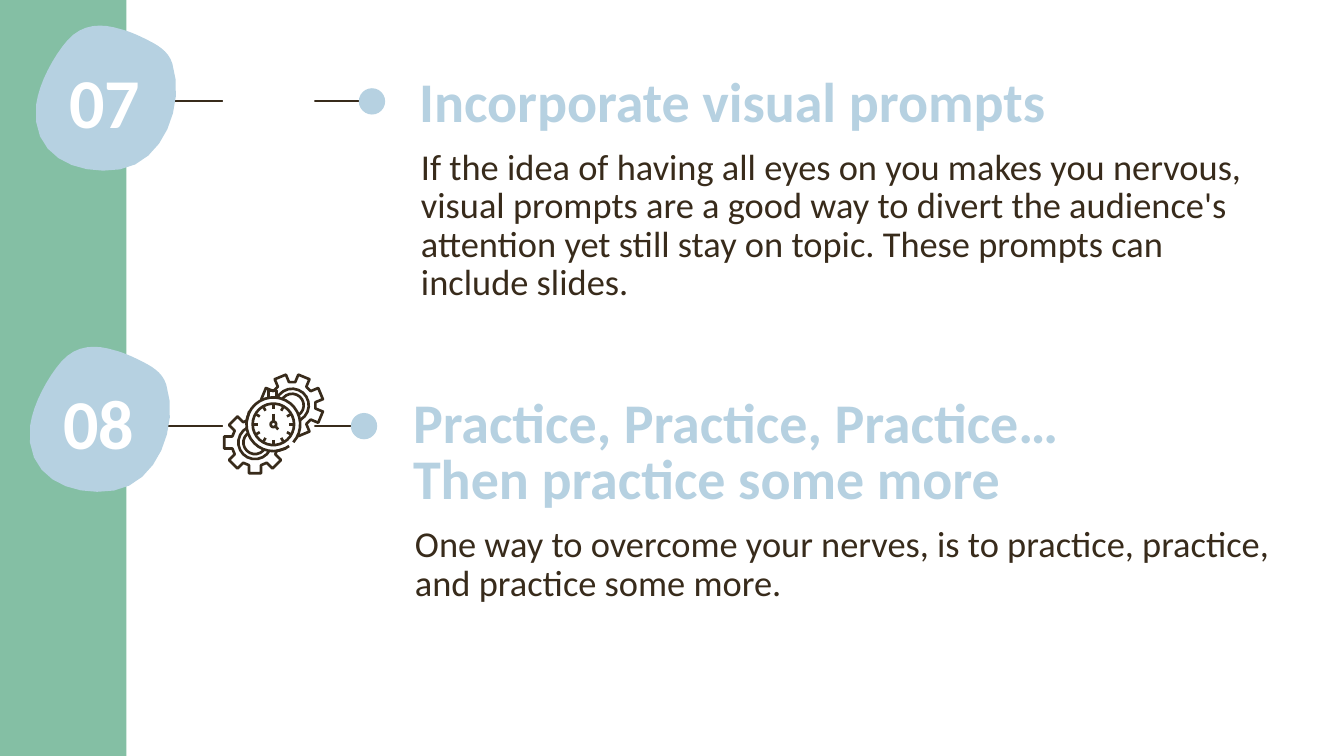
from math import cos, dist, radians, sin

from lxml.etree import SubElement
from pptx import Presentation
from pptx.dml.color import RGBColor
from pptx.enum.shapes import MSO_CONNECTOR, MSO_SHAPE
from pptx.enum.text import MSO_ANCHOR, PP_ALIGN
from pptx.oxml.ns import qn
from pptx.util import Pt

GREEN = RGBColor(0x84, 0xBF, 0xA4)
BLUE = RGBColor(0xB6, 0xD1, 0xE1)
BROWN = RGBColor(0x38, 0x2B, 0x1B)
WHITE = RGBColor(0xFF, 0xFF, 0xFF)

ICON_STROKE = 1.9
CLOCK_CENTRE = (195.3, 303.1)
CLOCK_RING = 19.2

# Badge outline: a start point, then curves of two handles and an end point
BADGE_START = (61.2, 2.9)
BADGE_CURVES = [
    ((47.5, -1.4), (33.8, -1.4), (23, 10.8)),
    ((13, 22.3), (2.9, 41), (0.7, 56.2)),
    ((-4.3, 92.2), (28.1, 108), (60.5, 103)),
    ((91.4, 97.9), (107.3, 56.9), (97.9, 27.4)),
    ((95, 18), (86.4, 13.7), (79.2, 10.1)),
    ((73.4, 7.2), (67, 4.3), BADGE_START),
]

TITLE = {"size": Pt(40), "bold": True}
BODY = {"size": Pt(26), "bold": False}
NUMBER = {"size": Pt(50), "bold": True}


def paint(shape, fill=None, stroke=None):
    shape.shadow.inherit = False
    if fill is None:
        shape.fill.background()
    else:
        shape.fill.solid()
        shape.fill.fore_color.rgb = fill
    if stroke is None:
        shape.line.fill.background()
    else:
        shape.line.color.rgb = stroke
        shape.line.width = Pt(ICON_STROKE)


def add_preset(slide, kind, left, top, width, height, fill):
    shape = slide.shapes.add_shape(kind, Pt(left), Pt(top), Pt(width), Pt(height))
    paint(shape, fill)


def add_outline(slide, contours, close=False, **colours):
    contours = [[(Pt(x), Pt(y)) for x, y in contour] for contour in contours]
    builder = slide.shapes.build_freeform(*contours[0][0], scale=1.0)
    for index, (first, *others) in enumerate(contours):
        if index:
            builder.move_to(*first)
        builder.add_line_segments(others, close=close)
    paint(builder.convert_to_shape(), **colours)


def add_text(slide, left, top, width, height, lines, font, colour,
             spacing, align=PP_ALIGN.LEFT):
    box = slide.shapes.add_textbox(Pt(left), Pt(top), Pt(width), Pt(height))
    frame = box.text_frame
    frame.word_wrap = True
    frame.vertical_anchor = MSO_ANCHOR.TOP
    for index, line in enumerate(lines):
        paragraph = frame.paragraphs[0] if index == 0 else frame.add_paragraph()
        paragraph.text = line
        paragraph.line_spacing = spacing
        paragraph.alignment = align
        for name, value in {"name": "Calibri", **font}.items():
            setattr(paragraph.font, name, value)
        paragraph.font.color.rgb = colour


def polar(centre, radius, degrees):
    angle = radians(degrees)
    return centre[0] + radius * cos(angle), centre[1] + radius * sin(angle)


def arc(centre, radius, start=0, end=360, steps=20):
    return [polar(centre, radius, start + (end - start) * step / steps)
            for step in range(steps + 1)]


def badge_points(left, top, steps=8):
    points, start = [], BADGE_START
    for first, second, end in BADGE_CURVES:
        for step in range(steps):
            t = step / steps
            weights = ((1 - t) ** 3, 3 * t * (1 - t) ** 2, 3 * t * t * (1 - t), t ** 3)
            x, y = (sum(w * p[axis] for w, p in zip(weights, (start, first, second, end)))
                    for axis in (0, 1))
            points.append((left + x, top + y))
        start = end
    return points


def outside_clock(points):
    """Keep the part of a loop, begun under the clock, that shows beside it."""
    def gap(point):
        return dist(point, CLOCK_CENTRE) - CLOCK_RING

    kept = []
    for (x1, y1), (x2, y2) in zip(points, points[1:]):
        if (gap((x1, y1)) > 0) != (gap((x2, y2)) > 0):
            steps = [(x1 + (x2 - x1) * k / 20, y1 + (y2 - y1) * k / 20) for k in range(21)]
            kept.append(min(steps, key=lambda point: abs(gap(point))))
        if gap((x2, y2)) > 0:
            kept.append((x2, y2))
    return kept


def gear_contours(centre, turn):
    root, tip, half_tooth = 16.2, 22, 4.3
    teeth = []
    for tooth in range(8):
        degrees = turn + 45 * tooth
        for reach, side in ((root, -half_tooth), (tip, -half_tooth),
                            (tip, half_tooth), (root, half_tooth)):
            teeth.append(polar(polar(centre, reach, degrees), side, degrees + 90))
    loops = [teeth + teeth[:1]]
    loops += [arc(centre, radius, turn, turn + 360) for radius in (11.9, 8.3)]
    return [outside_clock(loop) for loop in loops]


def add_icon(slide):
    x, y = CLOCK_CENTRE
    # Gears, crown and the outer ring with its gap at lower right
    crown = [(x - 3.6, y - 18.9), (x - 3.6, y - 24.1), (x + 2.2, y - 24.1), (x + 2.2, y - 19)]
    add_outline(slide, [*gear_contours((182.2, 316.1), -45),
                        *gear_contours((208.7, 289.6), 112.5),
                        crown, arc(CLOCK_CENTRE, CLOCK_RING, 54, 402, 30)], stroke=BROWN)
    # Clock face with hour marks
    marks = [[polar(CLOCK_CENTRE, radius, degrees) for radius in (11.2, 14)]
             for degrees in range(0, 360, 30)]
    add_outline(slide, [arc(CLOCK_CENTRE, 14.8, steps=30), *marks], stroke=BROWN)
    # Hub and hands
    add_outline(slide, [arc(CLOCK_CENTRE, 2, steps=12),
                        [(x, y - 7.6), (x, y - 2)],
                        [(x + 1.4, y + 1.4), (x + 3.4, y + 3.6)]], stroke=BROWN)


def add_pointer(slide, start, dot_left, y):
    line = slide.shapes.add_connector(
        MSO_CONNECTOR.STRAIGHT, Pt(dot_left + 5.8), Pt(y), Pt(start), Pt(y))
    line.line.color.rgb = BROWN
    line.line.width = Pt(1.5)
    SubElement(line._element.spPr, qn("a:effectLst"))
    add_preset(slide, MSO_SHAPE.OVAL, dot_left, y - 9.4, 18.8, 18.8, BLUE)


def add_tip(slide, left, top, number, title, title_height, body, body_box):
    add_text(slide, left + 268.4, *body_box, [body], BODY, BROWN, Pt(27.6))
    add_text(slide, left + 267.1, top + 33.8, 604.8, title_height,
             title, TITLE, BLUE, Pt(40.2))
    add_outline(slide, [badge_points(left, top)], close=True, fill=BLUE)
    add_text(slide, left - 11.1, top + 27.2, 121.7, 67.7, [number],
             NUMBER, WHITE, 0.9, PP_ALIGN.CENTER)


def main():
    deck = Presentation()
    deck.slide_width, deck.slide_height = Pt(960), Pt(540)
    slide = deck.slides.add_slide(deck.slide_layouts[6])

    # Pointers, with a white strip that opens a gap for the icons
    add_pointer(slide, 108.7, 256.3, 72.4)
    add_pointer(slide, 100.8, 250.6, 304.4)
    add_preset(slide, MSO_SHAPE.RECTANGLE, 159.1, 43.9, 65.5, 328.3, WHITE)

    # Side band
    add_preset(slide, MSO_SHAPE.RECTANGLE, 0, 0, 90.3, 540, GREEN)

    # Tips
    add_tip(slide, 25.2, 18, "07", ["Incorporate visual prompts"], 51.1,
            "If the idea of having all eyes on you makes you nervous, visual prompts "
            "are a good way to divert the audience's attention yet still stay on topic. "
            "These prompts can include slides.", (102.6, 627.1, 149.8))
    add_tip(slide, 20.9, 247.4, "08",
            ["Practice, Practice, Practice…", "Then practice some more"], 113,
            "One way to overcome your nerves, is to practice, practice, "
            "and practice some more.", (372.6, 646.6, 141.8))

    # Gears and clock
    add_icon(slide)

    deck.save("out.pptx")


if __name__ == "__main__":
    main()
